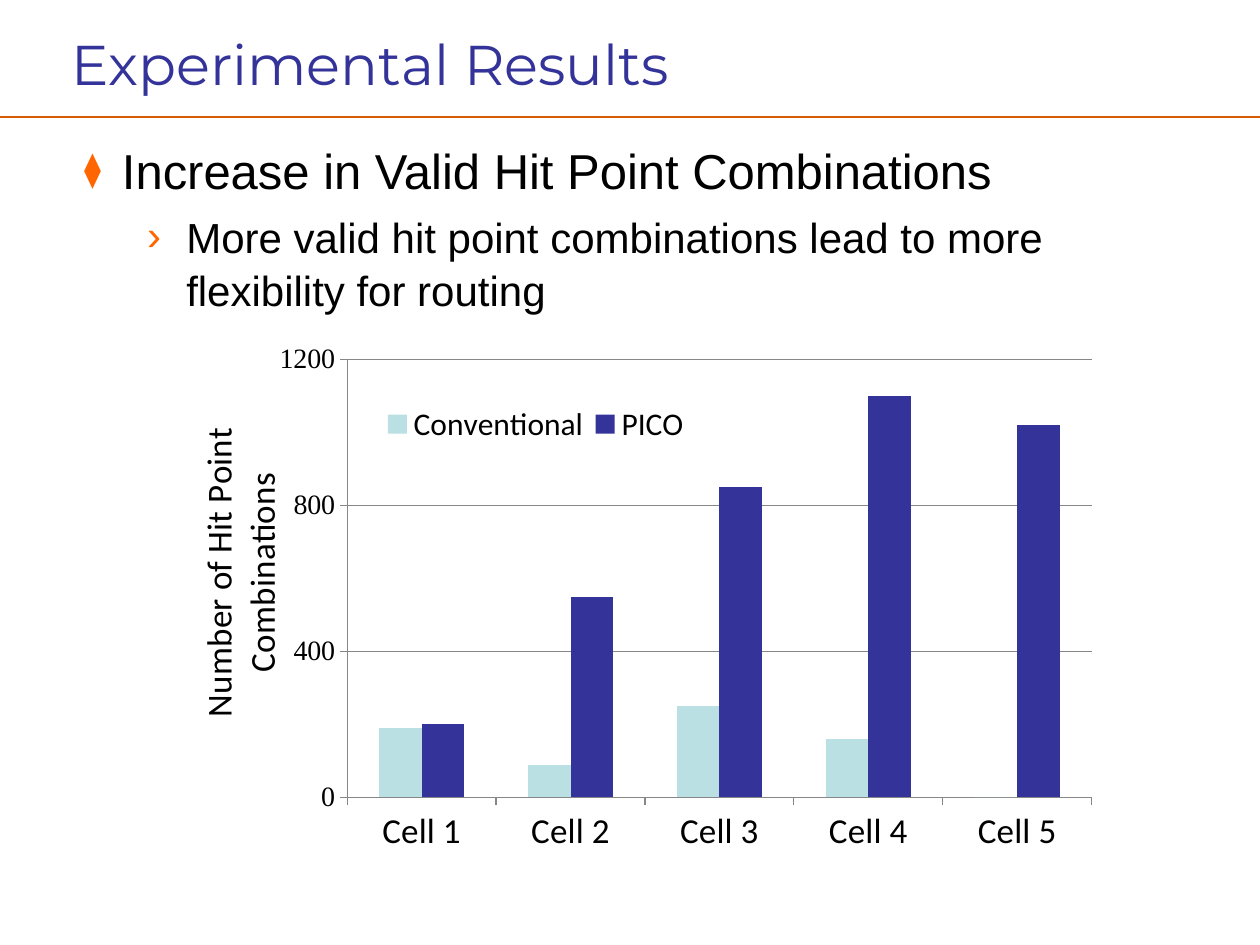
from lxml import etree
from pptx import Presentation
from pptx.chart.data import CategoryChartData
from pptx.dml.color import RGBColor
from pptx.enum.chart import XL_CHART_TYPE, XL_LEGEND_POSITION, XL_TICK_MARK
from pptx.enum.shapes import MSO_CONNECTOR
from pptx.enum.text import MSO_ANCHOR, PP_ALIGN
from pptx.oxml.ns import qn
from pptx.util import Pt

COLUMNS = XL_CHART_TYPE.COLUMN_CLUSTERED
LEGEND_RIGHT = XL_LEGEND_POSITION.RIGHT
TICK_OUTSIDE = XL_TICK_MARK.OUTSIDE
STRAIGHT = MSO_CONNECTOR.STRAIGHT
MIDDLE = MSO_ANCHOR.MIDDLE
LEFT = PP_ALIGN.LEFT

COLORS = {
    "text": "000000",
    "title": "333399",
    "rule": "D55C01",
    "bullet": "FF6600",
    "grid": "878787",
    "Conventional": "BBE0E3",
    "PICO": "333399",
}
CELLS = ["Cell 1", "Cell 2", "Cell 3", "Cell 4", "Cell 5"]
COMBINATIONS = {
    "Conventional": [190, 90, 250, 160, 0],
    "PICO": [200, 550, 850, 1100, 1020],
}


def color(name):
    return RGBColor.from_string(COLORS[name])


def style_font(font, name, size, color_name="text"):
    font.name = name
    font.size = Pt(size)
    font.bold = False
    font.color.rgb = color(color_name)


def add_title(page, text):
    title = page.shapes.title
    title.left, title.top, title.width, title.height = Pt(33.84), Pt(7.92), Pt(651.6), Pt(56.16)
    title.text_frame.text = text
    title.text_frame.vertical_anchor = MIDDLE
    para = title.text_frame.paragraphs[0]
    para.alignment = LEFT
    style_font(para.font, "Montserrat", 32, "title")


def add_rule(page, top, width):
    rule = page.shapes.add_connector(STRAIGHT, Pt(0), Pt(top), Pt(width), Pt(top))
    rule.line.color.rgb = color("rule")
    rule.line.width = Pt(1)
    etree.SubElement(rule._element.spPr, qn("a:effectLst"))


def add_bullet(para, symbol, percent, margin, indent):
    properties = para._p.get_or_add_pPr()
    properties.set("marL", str(Pt(margin)))
    properties.set("indent", str(Pt(indent)))
    bullet_color = etree.SubElement(properties, qn("a:buClr"))
    etree.SubElement(bullet_color, qn("a:srgbClr"), val=COLORS["bullet"])
    etree.SubElement(properties, qn("a:buSzPct"), val=str(percent * 1000))
    etree.SubElement(properties, qn("a:buFont"), typeface="Arial")
    etree.SubElement(properties, qn("a:buChar"), char=symbol)


def add_points(page):
    box = page.shapes.add_textbox(Pt(31.68), Pt(73.44), Pt(659.52), Pt(120))
    frame = box.text_frame
    frame.word_wrap = True
    frame.margin_top = Pt(5)
    main_point = frame.paragraphs[0]
    main_point.text = "Increase in Valid Hit Point Combinations"
    add_bullet(main_point, "⧫", 70, 30.96, -21.6)
    style_font(main_point.font, "Arial", 28)

    detail = frame.add_paragraph()
    detail.text = "More valid hit point combinations lead to more flexibility for routing"
    detail.level = 1
    add_bullet(detail, "›", 100, 67.68, -22.32)
    detail.space_before = Pt(5.5)
    style_font(detail.font, "Arial", 24)
    for para in frame.paragraphs:
        para.line_spacing = 1.05


def place(parent, before, target=None, **fractions):
    for old in parent.findall(qn("c:layout")):
        parent.remove(old)
    layout = etree.Element(qn("c:layout"))
    manual = etree.SubElement(layout, qn("c:manualLayout"))
    if target:
        etree.SubElement(manual, qn("c:layoutTarget"), val=target)
    for side in "xy":
        etree.SubElement(manual, qn(f"c:{side}Mode"), val="edge")
    for key, value in fractions.items():
        etree.SubElement(manual, qn(f"c:{key}"), val=str(value))
    parent.find(qn(before)).addprevious(layout)


def style_axis(axis, font_name, size):
    axis.major_tick_mark = TICK_OUTSIDE
    axis.format.line.color.rgb = color("grid")
    axis.format.line.width = Pt(0.75)
    style_font(axis.tick_labels.font, font_name, size)


def add_axis_title(axis, text):
    title = axis.axis_title
    title.text_frame.text = text
    style_font(title.text_frame.paragraphs[0].font, "Calibri", 20)
    body = title._element.xpath(".//a:bodyPr")[0]
    body.set("rot", "-5400000")
    body.set("vert", "horz")
    place(title._element, "c:overlay", x=0.03, y=0.15)


def add_combination_chart(page):
    data = CategoryChartData()
    data.categories = CELLS
    for name, values in COMBINATIONS.items():
        data.add_series(name, values)
    chart = page.shapes.add_chart(
        COLUMNS, Pt(90.72), Pt(196.56), Pt(538.56), Pt(294.48), data
    ).chart
    chart.has_title = False
    style_font(chart.font, "Arial", 10)

    plot = chart.plots[0]
    plot.gap_width = 150
    plot.overlap = 0
    plot.vary_by_categories = False
    for series in plot.series:
        series.format.fill.solid()
        series.format.fill.fore_color.rgb = color(series.name)
    place(plot._element.getparent(), "c:barChart", "inner", x=0.2, y=0.03, w=0.79, h=0.85)

    style_axis(chart.category_axis, "Calibri", 20)
    counts = chart.value_axis
    style_axis(counts, "Times New Roman", 16)
    counts.minimum_scale = 0
    counts.maximum_scale = 1200
    counts.major_unit = 400
    counts.has_major_gridlines = True
    counts.major_gridlines.format.line.color.rgb = color("grid")
    counts.major_gridlines.format.line.width = Pt(0.75)
    add_axis_title(counts, "Number of Hit Point Combinations")

    chart.has_legend = True
    legend = chart.legend
    legend.position = LEGEND_RIGHT
    legend.include_in_layout = False
    style_font(legend.font, "Calibri", 18)
    place(legend._element, "c:overlay", x=0.23, y=0.11, w=0.34, h=0.09)


def main():
    deck = Presentation()
    deck.slide_width, deck.slide_height = Pt(720), Pt(540)
    page = deck.slides.add_slide(deck.slide_layouts[5])
    add_rule(page, 66.96, 720)
    add_title(page, "Experimental Results")
    add_points(page)
    add_combination_chart(page)
    deck.save("out.pptx")


if __name__ == "__main__":
    main()
